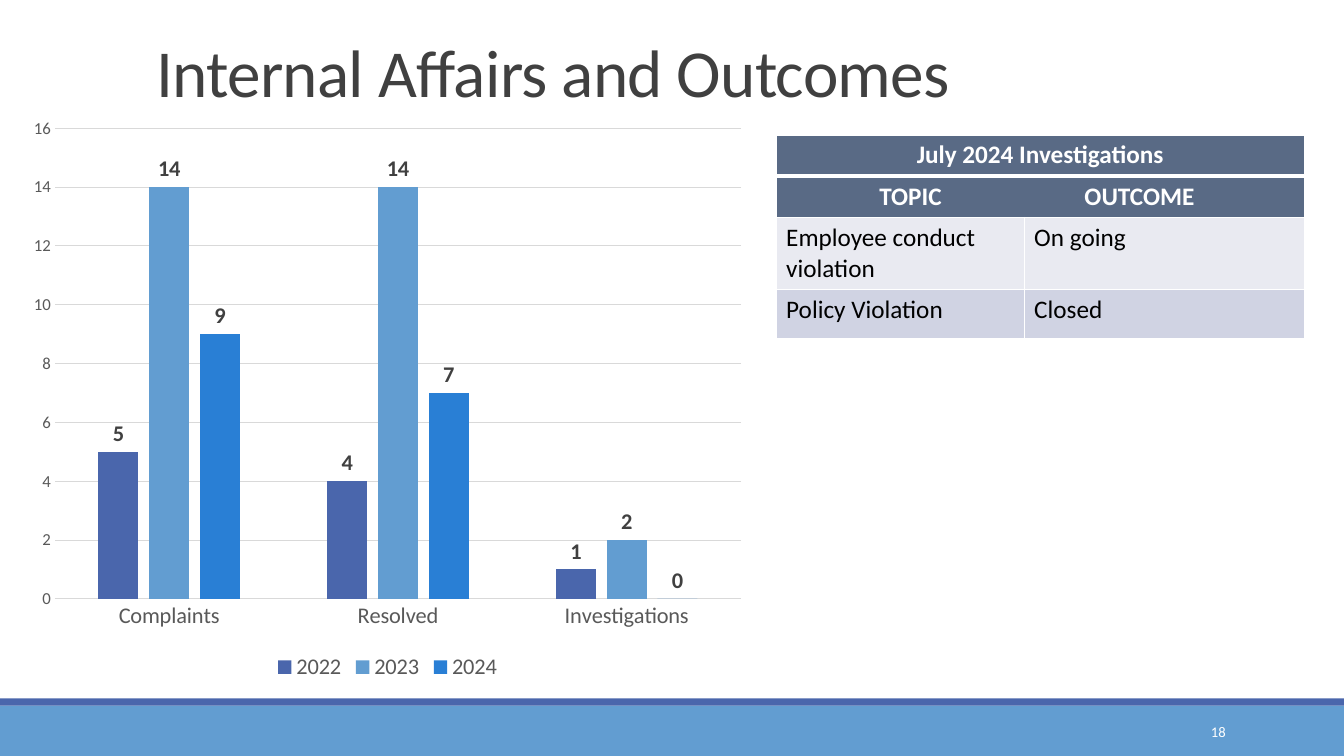
"""Build the Internal Affairs and Outcomes slide with its chart and table."""
from lxml import etree
from pptx import Presentation
from pptx.chart.data import CategoryChartData
from pptx.dml.color import RGBColor
from pptx.enum import chart as ch, shapes, text
from pptx.oxml import ns
from pptx.util import Cm, Pt

COLOURS = {
    "white": "FFFFFF", "black": "000000", "title": "404040", "axis": "595959",
    "grid": "D9D9D9", "indigo": "4A66AC", "sky": "629DD1", "blue": "297FD5",
    "header": "596A85", "light": "E9EAF1", "dark": "D0D3E3",
}


def style(font, size, colour, bold=False):
    font.name, font.size, font.bold = "Calibri", Pt(size), bold
    font.color.rgb = RGBColor.from_string(COLOURS[colour])


def paint(fill, colour):
    fill.solid()
    fill.fore_color.rgb = RGBColor.from_string(COLOURS[colour])


deck = Presentation()
deck.slide_width, deck.slide_height = Cm(33.87), Cm(19.05)
slide = deck.slides.add_slide(deck.slide_layouts[5])

for top, height, colour in ((17.78, 1.27, "sky"), (17.6, 0.18, "indigo")):
    band = slide.shapes.add_shape(
        shapes.MSO_SHAPE.RECTANGLE, 0, Cm(top), deck.slide_width, Cm(height))
    band.shadow.inherit = False
    paint(band.fill, colour)
    band.line.fill.background()

title = slide.shapes.title
title.left, title.top, title.width, title.height = Cm(3.68), Cm(0.48), Cm(23.34), Cm(2.46)
title.text_frame.text = "Internal Affairs and Outcomes"
title.text_frame.vertical_anchor = text.MSO_ANCHOR.BOTTOM
heading = title.text_frame.paragraphs[0]
heading.alignment, heading.line_spacing = text.PP_ALIGN.LEFT, 0.85
style(heading.runs[0].font, 48, "title")
heading.runs[0].font._element.set("spc", "-50")

cases = CategoryChartData()
cases.categories = ["Complaints", "Resolved", "Investigations"]
years = (("2022", (5, 4, 1), "indigo"), ("2023", (14, 14, 2), "sky"), ("2024", (9, 7, 0), "blue"))
for year, counts, _ in years:
    cases.add_series(year, counts)
chart = slide.shapes.add_chart(
    ch.XL_CHART_TYPE.COLUMN_CLUSTERED, Cm(0.48), Cm(2.69), Cm(18.57), Cm(14.58), cases).chart
style(chart.font, 10, "black")
chart.has_title = False
chart.has_legend = True
chart.legend.position = ch.XL_LEGEND_POSITION.BOTTOM
chart.legend.include_in_layout = False
style(chart.legend.font, 16, "axis")

for axis, size in ((chart.category_axis, 16), (chart.value_axis, 12)):
    axis.major_tick_mark = axis.minor_tick_mark = ch.XL_TICK_MARK.NONE
    style(axis.tick_labels.font, size, "axis")
counts_axis = chart.value_axis
counts_axis.minimum_scale, counts_axis.maximum_scale, counts_axis.major_unit = 0, 16, 2
counts_axis.format.line.fill.background()
for line in (chart.category_axis.format.line, counts_axis.major_gridlines.format.line):
    paint(line.fill, "grid")
    line.width = Pt(0.75)

columns = chart.plots[0]
columns.vary_by_categories = False
columns.gap_width, columns.overlap = 219, -27
for series, (_, _, colour) in zip(columns.series, years):
    paint(series.format.fill, colour)
    series.data_labels.show_value = True
    series.data_labels.position = ch.XL_LABEL_POSITION.OUTSIDE_END
    style(series.data_labels.font, 16, "title", True)

rows = (
    (("July 2024 Investigations", ""), "header", 1.04),
    (("TOPIC\tOUTCOME", ""), "header", 1.04),
    (("Employee conduct violation", "On going"), "light", 1.24),
    (("Policy Violation", "Closed"), "dark", 1.24),
)
outcomes = slide.shapes.add_table(4, 2, Cm(19.56), Cm(3.4), Cm(13.31), Cm(4.56)).table
outcomes.columns[0].width, outcomes.columns[1].width = Cm(6.25), Cm(7.06)
for r, (entries, fill, height) in enumerate(rows):
    outcomes.rows[r].height = Cm(height)
    is_header = fill == "header"
    for c, entry in enumerate(entries):
        cell = outcomes.cell(r, c)
        for side in ("lnL", "lnR", "lnT", "lnB"):
            heavy = (r, side) in ((0, "lnB"), (1, "lnT"))
            border = etree.SubElement(
                cell._tc.get_or_add_tcPr(), ns.qn(f"a:{side}"), w=str(Pt(3 if heavy else 1)))
            solid = etree.SubElement(border, ns.qn("a:solidFill"))
            etree.SubElement(solid, ns.qn("a:srgbClr"), val=COLOURS["white"])
        paint(cell.fill, fill)
        cell.text_frame.text = entry
        for run in cell.text_frame.paragraphs[0].runs:
            style(run.font, 18, "white" if is_header else "black", is_header)
    if is_header:
        outcomes.cell(r, 0).merge(outcomes.cell(r, 1))

outcomes.cell(0, 0).text_frame.paragraphs[0].alignment = text.PP_ALIGN.CENTER
labels = outcomes.cell(1, 0)
labels.margin_left = Cm(2.6)
stops = etree.SubElement(labels.text_frame.paragraphs[0]._p.get_or_add_pPr(), ns.qn("a:tabLst"))
etree.SubElement(stops, ns.qn("a:tab"), pos=str(Cm(5.17)), algn="l")

page = slide.shapes.add_textbox(Cm(27.51), Cm(17.93), Cm(3.63), Cm(1.02)).text_frame
page.word_wrap = True
page.vertical_anchor = text.MSO_ANCHOR.MIDDLE
page.text = "18"
page.paragraphs[0].alignment = text.PP_ALIGN.RIGHT
style(page.paragraphs[0].runs[0].font, 10.5, "white")

deck.save("out.pptx")
